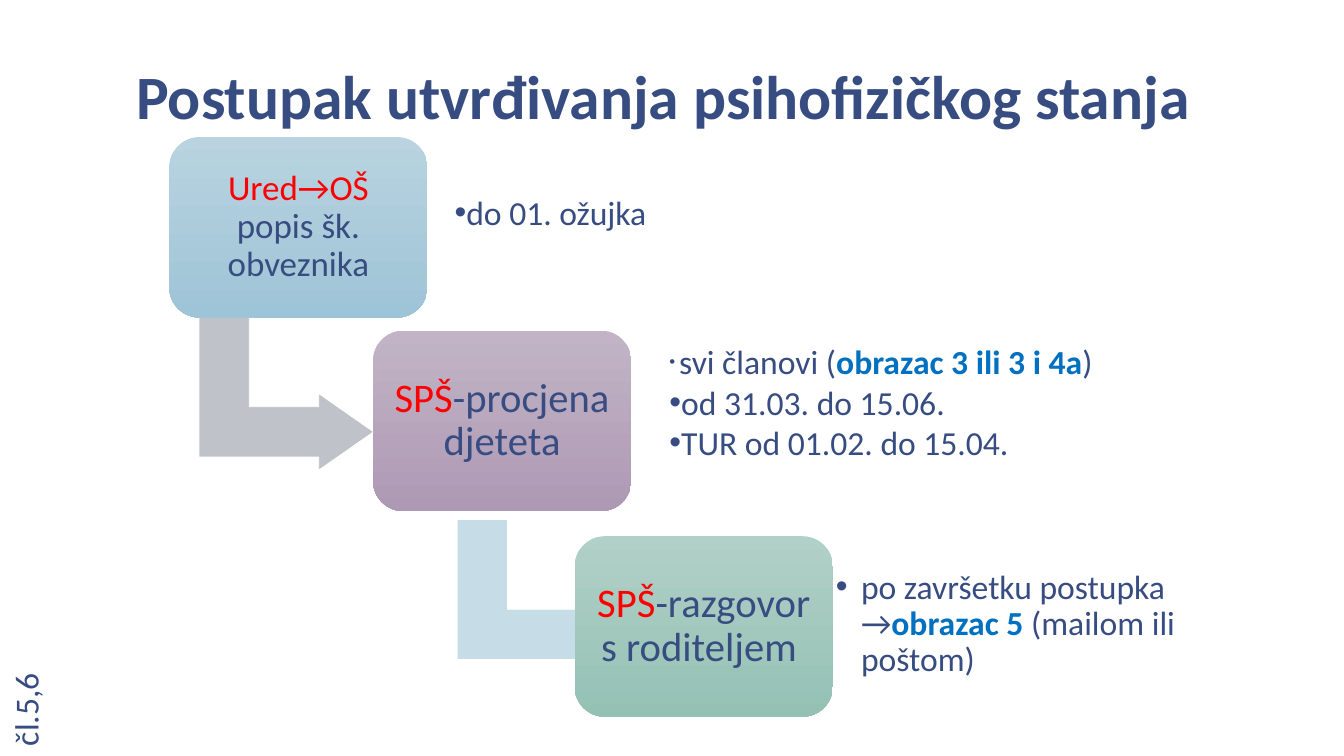
from dataclasses import dataclass
from typing import NamedTuple

from lxml import etree
from pptx import Presentation
from pptx import util as u
from pptx.dml.color import RGBColor
from pptx.enum import shapes, text
from pptx.oxml.ns import qn

NAVY = RGBColor(0x37, 0x4C, 0x81)
RED = RGBColor(0xFF, 0x00, 0x00)
BLUE = RGBColor(0x00, 0x70, 0xC0)
WHITE = RGBColor(0xFF, 0xFF, 0xFF)
GREY = RGBColor(0xC0, 0xC2, 0xCA)
PALE_BLUE = RGBColor(0xC6, 0xDD, 0xE7)
SKY_TOP = RGBColor(0xB9, 0xD3, 0xE0)
SKY_END = RGBColor(0x9E, 0xC4, 0xD7)
MAUVE_TOP = RGBColor(0xC2, 0xB4, 0xC6)
MAUVE_END = RGBColor(0xAE, 0x99, 0xB4)
SAGE_TOP = RGBColor(0xB1, 0xD0, 0xC7)
SAGE_END = RGBColor(0x95, 0xC1, 0xB5)

FONT = "Calibri"
WIDTH, HEIGHT = u.Inches(13.33), u.Inches(7.5)
COL, ROW = WIDTH / 100, HEIGHT / 100
LIST_LAYOUT = 4


class Area(NamedTuple):
    col: float
    row: float
    cols: float
    rows: float


class Span(NamedTuple):
    words: str
    color: RGBColor = NAVY
    bold: bool = False
    size: float = 24


@dataclass
class Step:
    area: Area
    top: RGBColor
    end: RGBColor
    label: list[Span]
    inset: float


@dataclass
class Notes:
    area: Area
    lines: list[list[Span]]
    inset: float
    bottom: float
    hang: float = 0
    spacing: float = 1.0


@dataclass
class Arrow:
    area: Area
    color: RGBColor


STEPS = [
    Step(Area(12.6, 18.13, 19.2, 23.87), SKY_TOP, SKY_END,
         [Span("Ured→OŠ ", RED, size=25), Span("popis šk. obveznika", size=25)], 0.1),
    Step(Area(27.76, 43.73, 19.2, 23.87), MAUVE_TOP, MAUVE_END,
         [Span("SPŠ", RED, size=29), Span("-procjena djeteta", size=29)], 0.12),
    Step(Area(42.76, 70.93, 19.2, 23.87), SAGE_TOP, SAGE_END,
         [Span("SPŠ", RED, size=29), Span("-razgovor s roditeljem ", size=29)], 0.12),
]
NOTES = [
    Notes(Area(33.08, 20.8, 27.9, 19.33), [[Span("do 01. ožujka")]], 0.1, 0.47),
    Notes(Area(49.44, 44.8, 33.3, 19.33),
          [[Span(" ", size=12), Span("svi članovi ("),
            Span("obrazac 3 ili 3 i 4a", BLUE, True), Span(")")],
           [Span("od 31.03. do 15.06.")],
           [Span("TUR od 01.02. do 15.04.")]], 0.05, 0.25),
    Notes(Area(61.44, 72.93, 32.2, 19.33),
          [[Span("po završetku postupka →"), Span("obrazac 5 ", BLUE, True),
            Span("(mailom ili poštom)")]], 0.1, 0.1, 0.25, 0.9),
]
ARROWS = [
    Arrow(Area(15.6, 40.53, 11.4, 23.07), GREY),
    Arrow(Area(34.81, 67.33, 11.4, 23.07), PALE_BLUE),
]


def frame(area: Area) -> tuple[int, int, int, int]:
    return (round(area.col * COL), round(area.row * ROW),
            round(area.cols * COL), round(area.rows * ROW))


def place(sp, area: Area) -> None:
    sp.left, sp.top, sp.width, sp.height = frame(area)


def set_frame(tf, anchor, side: float, top: float, bottom: float) -> None:
    tf.word_wrap = True
    tf.auto_size = text.MSO_AUTO_SIZE.NONE
    tf.vertical_anchor = anchor
    tf.margin_left = tf.margin_right = u.Inches(side)
    tf.margin_top, tf.margin_bottom = u.Inches(top), u.Inches(bottom)


def write(p, spans: list[Span], align, spacing: float = 1.0) -> None:
    p.alignment, p.line_spacing = align, spacing
    p.space_before = p.space_after = u.Pt(0)
    for span in spans:
        r = p.add_run()
        r.text = span.words
        r.font.name, r.font.size = FONT, u.Pt(span.size)
        r.font.bold, r.font.color.rgb = span.bold, span.color


def add_bullet(p, hang: float) -> None:
    props = p._p.get_or_add_pPr()
    props.set("marL", str(u.Inches(hang)))
    props.set("indent", str(-u.Inches(hang)))
    etree.SubElement(props, qn("a:buFont")).set("typeface", "Arial")
    etree.SubElement(props, qn("a:buChar")).set("char", "•")


def draw_arrow(slide, arrow: Arrow) -> None:
    sp = slide.shapes.add_shape(shapes.MSO_SHAPE.BENT_UP_ARROW, *frame(arrow.area))
    for i, share in enumerate((0.328, 0.25, 0.358)):
        sp.adjustments[i] = share
    sp.rotation = 90
    sp.shadow.inherit = False
    sp.fill.solid()
    sp.fill.fore_color.rgb = arrow.color
    sp.line.color.rgb, sp.line.width = WHITE, u.Pt(0.5)


def draw_step(slide, step: Step) -> None:
    sp = slide.shapes.add_shape(shapes.MSO_SHAPE.ROUNDED_RECTANGLE, *frame(step.area))
    sp.shadow.inherit = False
    sp.fill.gradient()
    sp.fill.gradient_angle = 270
    for stop, color in zip(sp.fill.gradient_stops, (step.top, step.end)):
        stop.color.rgb = color
    sp.line.fill.background()
    set_frame(sp.text_frame, text.MSO_ANCHOR.MIDDLE, step.inset, step.inset, step.inset)
    write(sp.text_frame.paragraphs[0], step.label, text.PP_ALIGN.CENTER, 0.9)


def fill_notes(sp, notes: Notes) -> None:
    place(sp, notes.area)
    tf = sp.text_frame
    set_frame(tf, text.MSO_ANCHOR.MIDDLE, notes.inset, notes.inset, notes.bottom)
    for i, spans in enumerate(notes.lines):
        p = tf.add_paragraph() if i else tf.paragraphs[0]
        write(p, spans, text.PP_ALIGN.LEFT, notes.spacing)
        add_bullet(p, notes.hang)


def main() -> None:
    prs = Presentation()
    prs.slide_width, prs.slide_height = WIDTH, HEIGHT
    slide = prs.slides.add_slide(prs.slide_layouts[LIST_LAYOUT])

    title, *bodies = slide.placeholders
    place(title, Area(9.15, 1.07, 83.35, 17.33))
    set_frame(title.text_frame, text.MSO_ANCHOR.BOTTOM, 0.13, 0.07, 0.07)
    write(title.text_frame.paragraphs[0],
          [Span("Postupak utvrđivanja psihofizičkog stanja", bold=True, size=44)],
          text.PP_ALIGN.LEFT, 0.85)

    for sp, notes in zip(bodies, NOTES):
        fill_notes(sp, notes)
    for sp in bodies[len(NOTES):]:
        sp.element.getparent().remove(sp.element)

    for arrow in ARROWS:
        draw_arrow(slide, arrow)
    for step in STEPS:
        draw_step(slide, step)

    article = slide.shapes.add_textbox(*frame(Area(-2.55, 88.8, 8.85, 6.67)))
    article.rotation = 270
    set_frame(article.text_frame, text.MSO_ANCHOR.TOP, 0.1, 0.05, 0.05)
    write(article.text_frame.paragraphs[0], [Span("čl.5,6")], text.PP_ALIGN.LEFT)

    prs.save("out.pptx")


if __name__ == "__main__":
    main()
